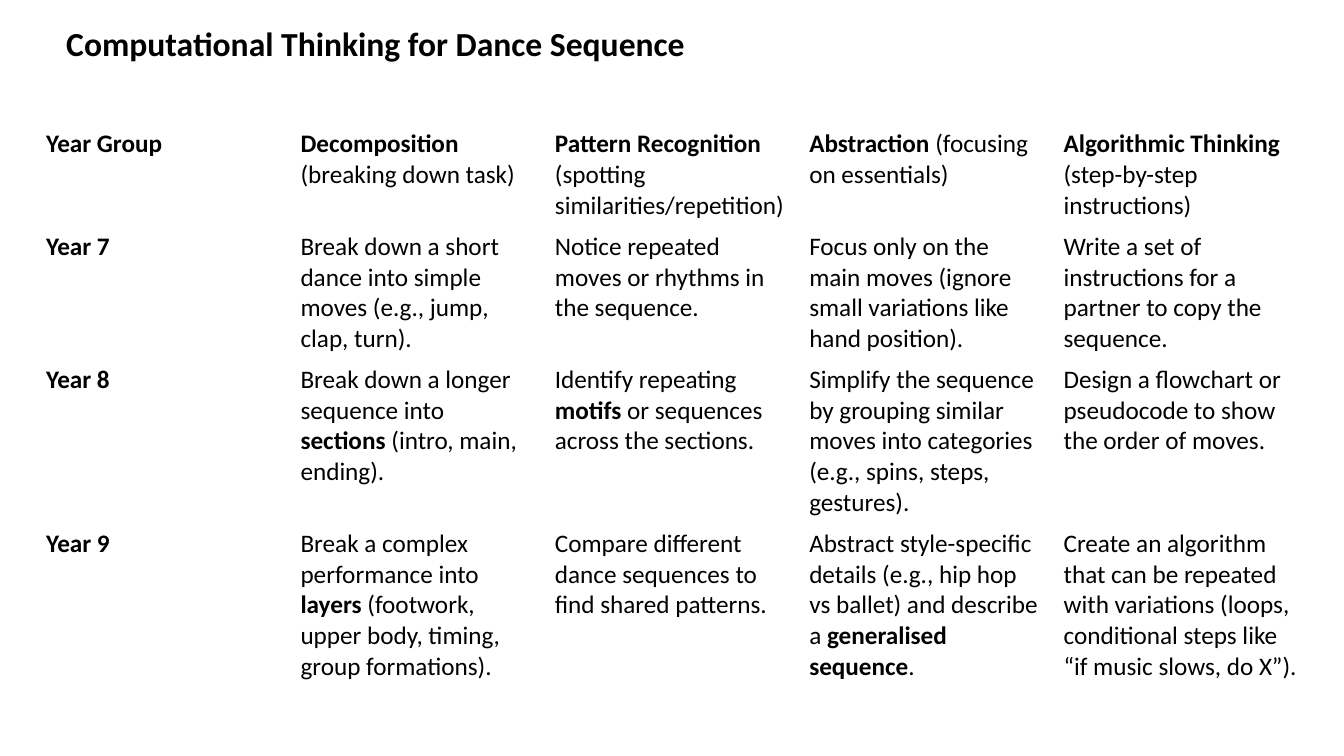
from dataclasses import dataclass

from pptx import Presentation
from pptx import util as u
from pptx.dml.color import RGBColor
from pptx.enum import text as t
from pptx.slide import Slide
from pptx.text.text import TextFrame


@dataclass(frozen=True)
class Theme:
    font: str = "Calibri"
    ink: RGBColor = RGBColor(0, 0, 0)
    head: u.Pt = u.Pt(24)
    body: u.Pt = u.Pt(18)


@dataclass(frozen=True)
class Row:
    high: float
    cells: tuple[str, ...]


THEME = Theme()
MARK = "**"
WIDE = 6.41

TITLE = "**Computational Thinking for Dance Sequence**"
ROWS = (
    Row(2.55, (
        "**Year Group**",
        "**Decomposition** (breaking down task)",
        "**Pattern Recognition** (spotting similarities/repetition)",
        "**Abstraction** (focusing on essentials)",
        "**Algorithmic Thinking** (step-by-step instructions)",
    )),
    Row(3.3, (
        "**Year 7**",
        "Break down a short dance into simple moves (e.g., jump, clap, turn).",
        "Notice repeated moves or rhythms in the sequence.",
        "Focus only on the main moves (ignore small variations like hand position).",
        "Write a set of instructions for a partner to copy the sequence.",
    )),
    Row(4.06, (
        "**Year 8**",
        "Break down a longer sequence into **sections** (intro, main, ending).",
        "Identify repeating **motifs** or sequences across the sections.",
        "Simplify the sequence by grouping similar moves into categories "
        "(e.g., spins, steps, gestures).",
        "Design a flowchart or pseudocode to show the order of moves.",
    )),
    Row(4.06, (
        "**Year 9**",
        "Break a complex performance into **layers** "
        "(footwork, upper body, timing, group formations).",
        "Compare different dance sequences to find shared patterns.",
        "Abstract style-specific details (e.g., hip hop vs ballet) "
        "and describe a **generalised sequence**.",
        "Create an algorithm that can be repeated with variations "
        "(loops, conditional steps like “if music slows, do X”).",
    )),
)


def write(frame: TextFrame, words: str, size: u.Pt) -> None:
    """Fill the frame, setting the words between marks in bold."""
    para = frame.paragraphs[0]
    for i, part in enumerate(words.split(MARK)):
        if part:
            run = para.add_run()
            run.text = part
            run.font.name = THEME.font
            run.font.size = size
            run.font.color.rgb = THEME.ink
            run.font.bold = i % 2 == 1


def add_grid(slide: Slide, rows: tuple[Row, ...]) -> None:
    cols = len(rows[0].cells)
    high = sum(row.high for row in rows)
    grid = slide.shapes.add_table(
        len(rows), cols, u.Cm(0.91), u.Cm(3.12), u.Cm(WIDE * cols), u.Cm(high)
    ).table
    grid.first_row = grid.horz_banding = False
    for col in grid.columns:
        col.width = u.Cm(WIDE)
    for y, row in enumerate(rows):
        grid.rows[y].height = u.Cm(row.high)
        for x, words in enumerate(row.cells):
            cell = grid.cell(y, x)
            cell.fill.background()
            write(cell.text_frame, words, THEME.body)


def add_title(slide: Slide, words: str) -> None:
    box = slide.shapes.add_textbox(u.Cm(1.42), u.Cm(0.46), u.Cm(17.12), u.Cm(2.06))
    frame = box.text_frame
    frame.word_wrap = True
    frame.auto_size = t.MSO_AUTO_SIZE.SHAPE_TO_FIT_TEXT
    write(frame, words, THEME.head)


def main() -> None:
    deck = Presentation()
    deck.slide_width, deck.slide_height = u.Cm(33.87), u.Cm(19.05)
    slide = deck.slides.add_slide(deck.slide_layouts[6])
    add_grid(slide, ROWS)
    add_title(slide, TITLE)
    deck.save("out.pptx")


if __name__ == "__main__":
    main()
